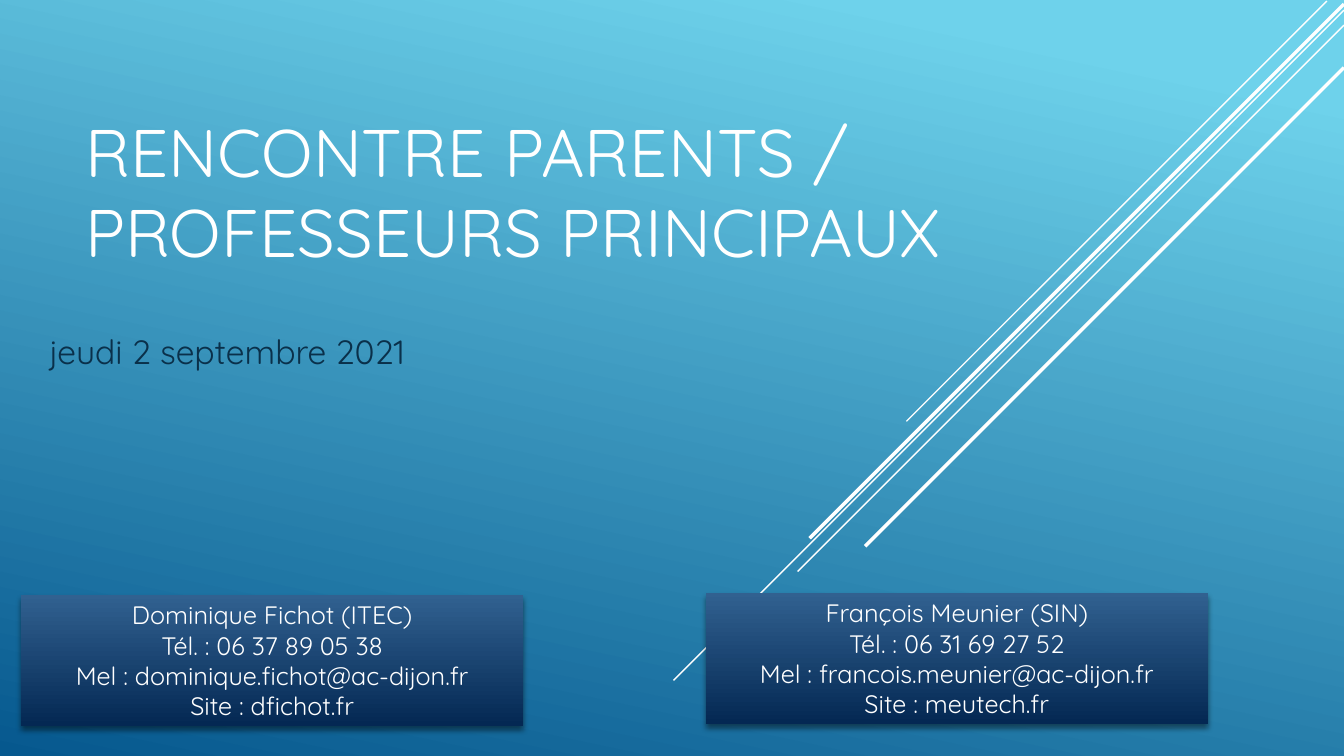
from lxml import etree
from pptx import Presentation
from pptx.dml.color import RGBColor
from pptx.enum.shapes import MSO_CONNECTOR, MSO_SHAPE
from pptx.enum.text import MSO_ANCHOR, PP_ALIGN
from pptx.oxml.ns import qn
from pptx.util import Inches, Pt

LINE, RECT = MSO_CONNECTOR.STRAIGHT, MSO_SHAPE.RECTANGLE
TOP, MIDDLE, BOTTOM = MSO_ANCHOR.TOP, MSO_ANCHOR.MIDDLE, MSO_ANCHOR.BOTTOM
LEFT, CENTER = PP_ALIGN.LEFT, PP_ALIGN.CENTER

# Content
FONT = "Quicksand"
COLORS = {"sky": "6ED2EB", "sea": "06588E", "white": "FFFFFF", "date": "0A304A",
          "card_top": "316190", "card_bottom": "042853", "shadow": "000000"}
TITLE = "RENCONTRE PARENTS / PROFESSEURS PRINCIPAUX"
DATE = "jeudi 2 septembre 2021"
CARD_SIZE = (4.98, 1.3)
CARDS = [  # left, top, lines
    (7, 5.88, ["François Meunier (SIN)", "Tél. : 06 31 69 27 52",
               "Mel : francois.meunier@ac-dijon.fr", "Site : meutech.fr"]),
    (0.21, 5.9, ["Dominique Fichot (ITEC)", "Tél. : 06 37 89 05 38",
                 "Mel : dominique.fichot@ac-dijon.fr", "Site : dfichot.fr"]),
]
DIAGONALS = [  # upper right x, y, run (each falls at 45 degrees), weight
    (13.16, 0.01, 4.17, 1),
    (13.33, 0.1, 6.65, 1),
    (13.33, 0.25, 5.42, 1),
    (13.33, 0.04, 5.3, 2.5),
    (13.33, 0.67, 4.75, 2.5),
]


def rgb(name):
    return RGBColor.from_string(COLORS[name])


def set_gradient(fill, clockwise, *stops):
    fill.gradient()
    fill.gradient_angle = 360 - clockwise
    for stop, (position, name) in zip(fill.gradient_stops, stops):
        stop.position = position
        stop.color.rgb = rgb(name)


def write(shape, lines, size, color, align=LEFT, anchor=TOP):
    tf = shape.text_frame
    tf.word_wrap = True
    tf.vertical_anchor = anchor
    tf.text = "\n".join(lines)
    for p in tf.paragraphs:
        p.alignment = align
        p.font.name, p.font.size = FONT, Pt(size)
        p.font.color.rgb = rgb(color)


def add_text(box, text, size, color, anchor=TOP):
    tb = s.shapes.add_textbox(*map(Inches, box))
    write(tb, [text], size, color, anchor=anchor)


def add_shadow(shape):
    shape.shadow.inherit = False
    effects = shape._element.spPr.find(qn("a:effectLst"))
    outer = etree.SubElement(effects, qn("a:outerShdw"), blurRad=str(Pt(4)),
                             dist=str(Pt(3)), dir="5400000", rotWithShape="0")
    color = etree.SubElement(outer, qn("a:srgbClr"), val=COLORS["shadow"])
    etree.SubElement(color, qn("a:alpha"), val="46000")


prs = Presentation()
prs.slide_width, prs.slide_height = Inches(13.33), Inches(7.5)
s = prs.slides.add_slide(prs.slide_layouts[6])
set_gradient(s.background.fill, 102, (0.1, "sky"), (1, "sea"))

# Diagonal lines
for x, y, run, weight in DIAGONALS:
    c = s.shapes.add_connector(LINE, *map(Inches, (x, y, x - run, y + run)))
    c.line.color.rgb = rgb("white")
    c.line.width = Pt(weight)
    etree.SubElement(c._element.spPr, qn("a:effectLst"))

# Title
add_text((0.75, 0.79, 8.75, 1.95), TITLE, 48, "white", BOTTOM)

# Contact cards
for x, y, lines in CARDS:
    sp = s.shapes.add_shape(RECT, *map(Inches, (x, y, *CARD_SIZE)))
    set_gradient(sp.fill, 90, (0, "card_top"), (1, "card_bottom"))
    sp.line.fill.background()
    add_shadow(sp)
    write(sp, lines, 18, "white", CENTER, MIDDLE)

# Date
add_text((0.39, 3.23, 5.51, 0.4), DATE, 24, "date")

prs.save("out.pptx")
